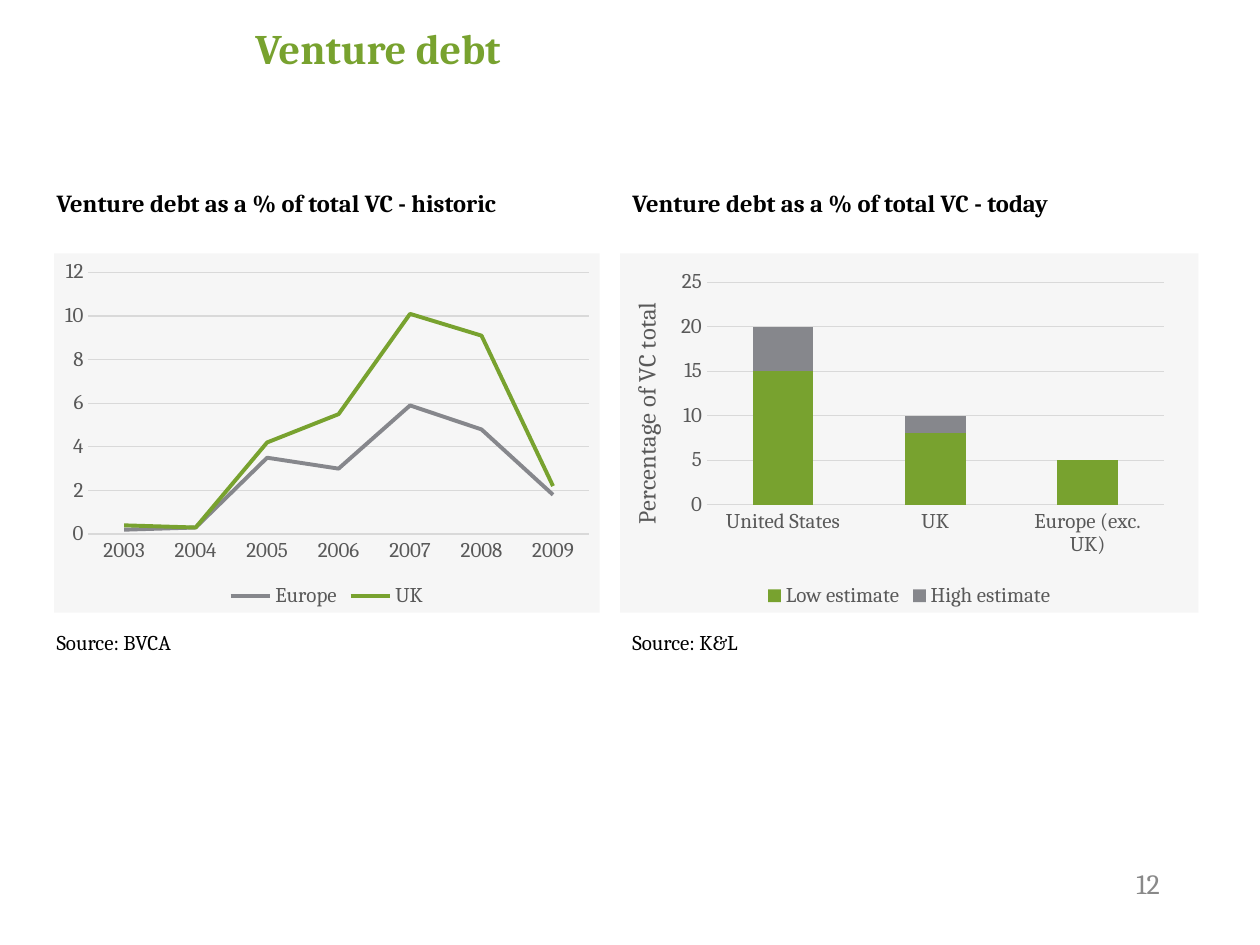
from lxml import etree
from pptx import Presentation
from pptx import util as u
from pptx.chart.data import CategoryChartData
from pptx.dml.color import RGBColor
from pptx.enum import chart as ch
from pptx.oxml import parse_xml
from pptx.oxml.ns import nsdecls, qn

FONT = "Cambria"
GREEN = RGBColor(0x78, 0xA2, 0x2F)
GREY = RGBColor(0x86, 0x87, 0x8C)
BLACK = RGBColor(0, 0, 0)
LABEL = RGBColor(0x59, 0x59, 0x59)
GRID = RGBColor(0xD9, 0xD9, 0xD9)
PANEL = RGBColor(0xF6, 0xF6, 0xF6)
NUMBER = RGBColor(0x89, 0x89, 0x89)

TITLE = "Venture debt"
PAGE = "12"
PANELS = [
    dict(heading="Venture debt as a % of total VC - historic", source="Source: BVCA",
         text_left=0.89, left=1.09, width=11.0, kind=ch.XL_CHART_TYPE.LINE,
         cats=["2003", "2004", "2005", "2006", "2007", "2008", "2009"],
         series=[("Europe", [0.2, 0.3, 3.5, 3, 5.9, 4.8, 1.8], GREY),
                 ("UK", [0.4, 0.3, 4.2, 5.5, 10.1, 9.1, 2.2], GREEN)],
         top_value=12, step=2),
    dict(heading="Venture debt as a % of total VC - today", source="Source: K&L",
         text_left=12.5, left=12.5, width=11.66, kind=ch.XL_CHART_TYPE.COLUMN_STACKED,
         cats=["United States", "UK", "Europe (exc. UK)"],
         series=[("Low estimate", [15, 8, 5], GREEN),
                 ("High estimate", [5, 2, 0], GREY)],
         top_value=25, step=5, axis_title="Percentage of VC total",
         plot=dict(x=0.15, y=0.08, w=0.79, h=0.62)),
]
HEADING_TOP, CHART_TOP, SOURCE_TOP = 3.66, 5.11, 12.57
CHART_HEIGHT, TEXT_WIDTH, TEXT_HEIGHT = 7.24, 11.2, 1.19


def style(font, size, color, bold=False):
    font.name, font.size, font.bold = FONT, u.Pt(size), bold
    font.color.rgb = color


def add_text(s, content, left, top, width, height, size, color, bold=False):
    sp = s.shapes.add_textbox(u.Cm(left), u.Cm(top), u.Cm(width), u.Cm(height))
    tf = sp.text_frame
    tf.word_wrap = True
    tf.text = content
    style(tf.paragraphs[0].runs[0].font, size, color, bold)


def fill_background(chart, color):
    sp_pr = parse_xml(
        f'<c:spPr {nsdecls("c", "a")}><a:solidFill><a:srgbClr val="{color}"/></a:solidFill>'
        '<a:ln><a:noFill/></a:ln></c:spPr>')
    chart.element.find(qn("c:chart")).addnext(sp_pr)


def place_plot(chart, box):
    """Fix the inner plot area, in fractions of the chart."""
    area = chart.element.find(qn("c:chart")).find(qn("c:plotArea"))
    for old in area.findall(qn("c:layout")):
        area.remove(old)
    layout = etree.Element(qn("c:layout"))
    manual = etree.SubElement(layout, qn("c:manualLayout"))
    settings = dict(layoutTarget="inner", xMode="edge", yMode="edge", **box)
    for name, value in settings.items():
        etree.SubElement(manual, qn(f"c:{name}")).set("val", str(value))
    area.insert(0, layout)


def style_axes(chart, panel):
    cat, val = chart.category_axis, chart.value_axis
    for axis in (cat, val):
        axis.major_tick_mark = axis.minor_tick_mark = ch.XL_TICK_MARK.NONE
        style(axis.tick_labels.font, 12, LABEL)
    val.has_major_gridlines = True
    for line in (cat.format.line, val.major_gridlines.format.line):
        line.color.rgb, line.width = GRID, u.Pt(0.75)
    val.format.line.fill.background()
    val.minimum_scale, val.maximum_scale = 0, panel["top_value"]
    val.major_unit = panel["step"]
    if "axis_title" in panel:
        tf = val.axis_title.text_frame
        tf.text = panel["axis_title"]
        style(tf.paragraphs[0].runs[0].font, 14, LABEL)


def add_panel_chart(s, panel):
    data = CategoryChartData()
    data.categories = panel["cats"]
    for name, values, _ in panel["series"]:
        data.add_series(name, values)
    chart = s.shapes.add_chart(panel["kind"], u.Cm(panel["left"]), u.Cm(CHART_TOP),
                               u.Cm(panel["width"]), u.Cm(CHART_HEIGHT), data).chart
    style(chart.font, 10, BLACK)
    chart.has_title = False
    chart.has_legend = True
    chart.legend.position = ch.XL_LEGEND_POSITION.BOTTOM
    chart.legend.include_in_layout = False
    style(chart.legend.font, 12, LABEL)
    fill_background(chart, PANEL)
    style_axes(chart, panel)

    plot = chart.plots[0]
    plot.vary_by_categories = False
    is_line = panel["kind"] == ch.XL_CHART_TYPE.LINE
    if not is_line:
        plot.gap_width, plot.overlap = 150, 100
    for series, (_, _, color) in zip(plot.series, panel["series"]):
        if is_line:
            series.smooth = False
            series.format.line.color.rgb = color
            series.format.line.width = u.Pt(2.25)
        else:
            series.format.fill.solid()
            series.format.fill.fore_color.rgb = color
    if "plot" in panel:
        place_plot(chart, panel["plot"])


def main():
    prs = Presentation()
    prs.slide_width, prs.slide_height = u.Cm(25.4), u.Cm(19.05)
    s = prs.slides.add_slide(prs.slide_layouts[6])
    add_text(s, PAGE, 22.66, 17.35, 1.22, 0.94, 16, NUMBER)
    add_text(s, TITLE, 4.9, 0.33, 20.5, 2.31, 24, GREEN, bold=True)
    for panel in PANELS:
        left = panel["text_left"]
        add_text(s, panel["heading"], left, HEADING_TOP, TEXT_WIDTH, TEXT_HEIGHT,
                 14, BLACK, bold=True)
        add_panel_chart(s, panel)
        add_text(s, panel["source"], left, SOURCE_TOP, TEXT_WIDTH, TEXT_HEIGHT, 12, BLACK)
    prs.save("out.pptx")


if __name__ == "__main__":
    main()
